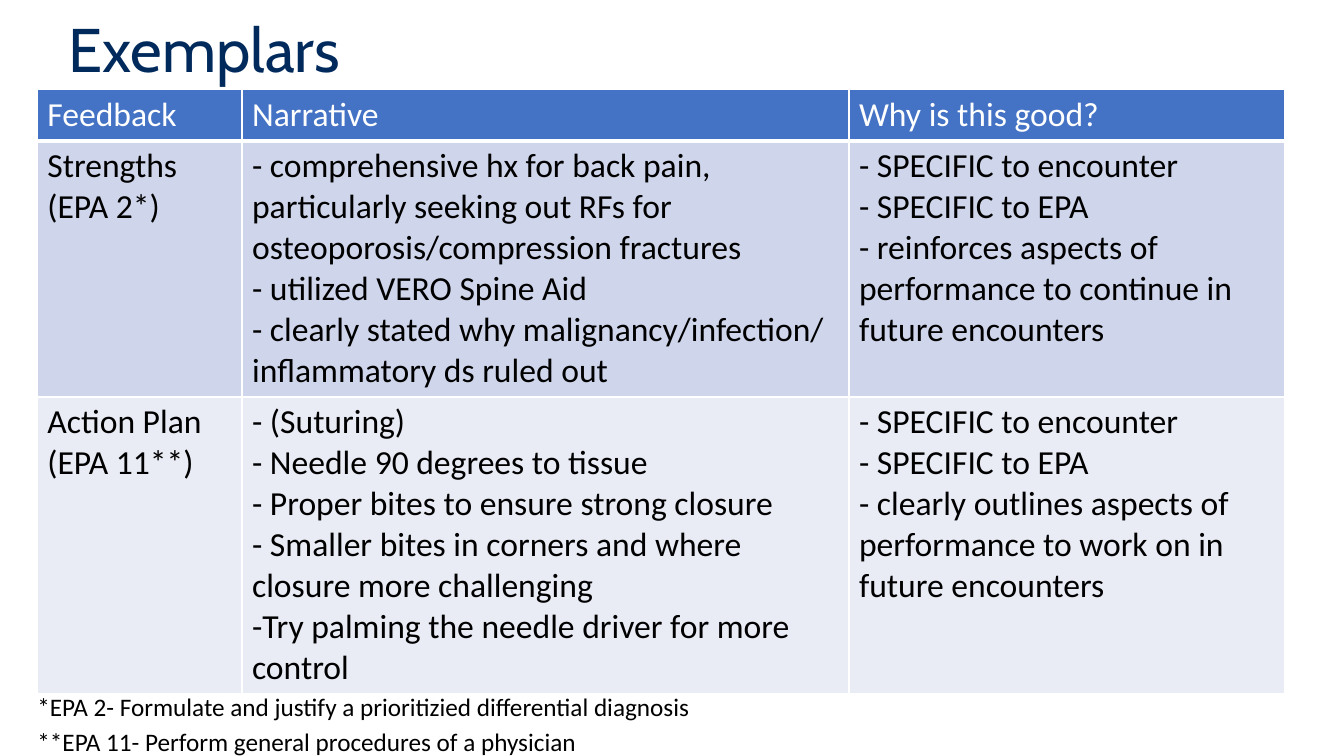
from lxml import etree
from pptx import Presentation
from pptx import util as u
from pptx.dml.color import RGBColor
from pptx.enum import text
from pptx.oxml import ns

WIDE, HIGH = u.Inches(13.33), u.Inches(7.5)
NAVY = RGBColor(0x00, 0x2A, 0x5C)
BLUE = RGBColor(0x44, 0x72, 0xC4)
PALE = RGBColor(0xCF, 0xD5, 0xEA)
MIST = RGBColor(0xE9, 0xEB, 0xF5)
WHITE = RGBColor(0xFF, 0xFF, 0xFF)
BLACK = RGBColor(0x00, 0x00, 0x00)

LEFT = 2.78
COLS = [15.23, 45.16, 32.41]
ROWS = [6.76, 33.85, 39.28]
FILLS = [BLUE, PALE, MIST]
INKS = [WHITE, BLACK, BLACK]
CELLS = [
    [["Feedback"], ["Narrative"], ["Why is this good?"]],
    [
        ["Strengths (EPA 2*)"],
        [
            "- comprehensive hx for back pain, particularly seeking out RFs for osteoporosis/compression fractures",
            "- utilized VERO Spine Aid",
            "- clearly stated why malignancy/infection/ inflammatory ds ruled out",
        ],
        [
            "- SPECIFIC to encounter",
            "- SPECIFIC to EPA",
            "- reinforces aspects of performance to continue in future encounters",
        ],
    ],
    [
        ["Action Plan (EPA 11**)"],
        [
            "- (Suturing)",
            "- Needle 90 degrees to tissue",
            "- Proper bites to ensure strong closure",
            "- Smaller bites in corners and where closure more challenging",
            "-Try palming the needle driver for more control",
        ],
        [
            "- SPECIFIC to encounter",
            "- SPECIFIC to EPA",
            "- clearly outlines aspects of performance to work on in future encounters",
        ],
    ],
]
NOTES = [
    "*EPA 2- Formulate and justify a prioritizied differential diagnosis",
    "**EPA 11- Perform general procedures of a physician",
]


def across(share):
    return round(WIDE * share / 100)


def down(share):
    return round(HIGH * share / 100)


def area(left, top, width, height):
    return across(left), down(top), across(width), down(height)


def apply(item, form):
    for name, value in form.items():
        setattr(item, name, value)


def write(frame, lines, face, size, ink, form):
    for spot, line in enumerate(lines):
        para = frame.add_paragraph() if spot else frame.paragraphs[0]
        apply(para, form)
        run = para.add_run()
        run.text = line
        apply(run.font, {"name": face, "size": u.Pt(size), "bold": False})
        run.font.color.rgb = ink


def edge(cell, head):
    props = cell._tc.get_or_add_tcPr()
    for spot, side in enumerate("LRTB"):
        width = 3 if head and side == "B" else 1
        line = etree.Element(ns.qn(f"a:ln{side}"), w=str(u.Pt(width)))
        fill = etree.SubElement(line, ns.qn("a:solidFill"))
        etree.SubElement(fill, ns.qn("a:srgbClr"), val=str(WHITE))
        props.insert(spot, line)


def add_title(slide):
    title = slide.shapes.title
    apply(title, dict(zip(("left", "top", "width", "height"), area(4.35, 0, 89.65, 13.87))))
    apply(title.text_frame, {
        "word_wrap": True,
        "auto_size": text.MSO_AUTO_SIZE.NONE,
        "vertical_anchor": text.MSO_ANCHOR.MIDDLE,
    })
    form = {"alignment": text.PP_ALIGN.LEFT, "line_spacing": 0.9}
    write(title.text_frame, ["Exemplars"], "Cabin", 44, NAVY, form)


def add_grid(slide):
    place = area(LEFT, 11.87, sum(COLS), sum(ROWS))
    table = slide.shapes.add_table(len(ROWS), len(COLS), *place).table
    for col, share in zip(table.columns, COLS):
        col.width = across(share)
    for row, share in zip(table.rows, ROWS):
        row.height = down(share)
    for r, line in enumerate(CELLS):
        for c, lines in enumerate(line):
            cell = table.cell(r, c)
            cell.fill.solid()
            cell.fill.fore_color.rgb = FILLS[r]
            edge(cell, r == 0)
            write(cell.text_frame, lines, "Calibri", 24, INKS[r], {})


def add_notes(slide):
    box = slide.shapes.add_textbox(*area(LEFT, 91.47, 50.79, 8.67))
    sides = ("margin_left", "margin_top", "margin_right", "margin_bottom")
    apply(box.text_frame, {"word_wrap": True, **dict.fromkeys(sides, 0)})
    write(box.text_frame, NOTES, "Calibri", 18, BLACK, {"space_before": u.Pt(3)})


def main():
    deck = Presentation()
    apply(deck, {"slide_width": WIDE, "slide_height": HIGH})
    slide = deck.slides.add_slide(deck.slide_layouts[5])
    add_title(slide)
    add_grid(slide)
    add_notes(slide)
    deck.save("out.pptx")


if __name__ == "__main__":
    main()
